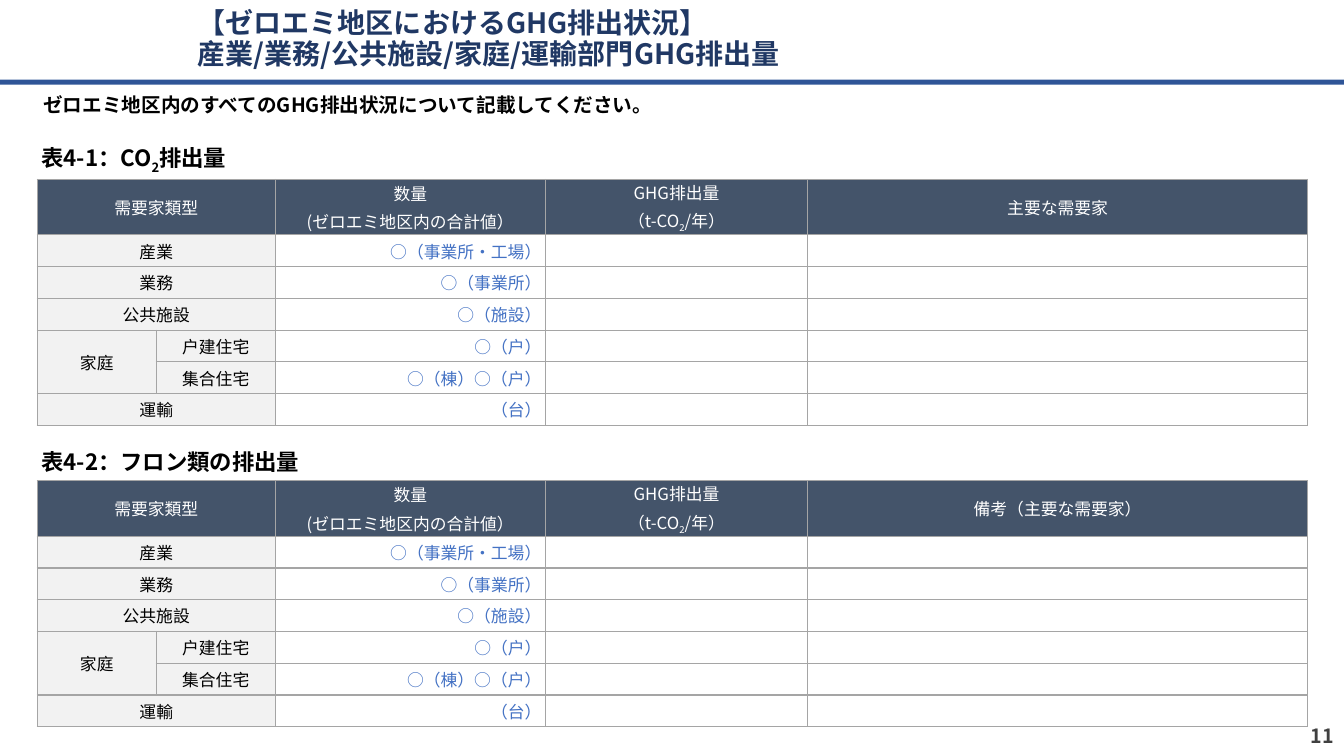
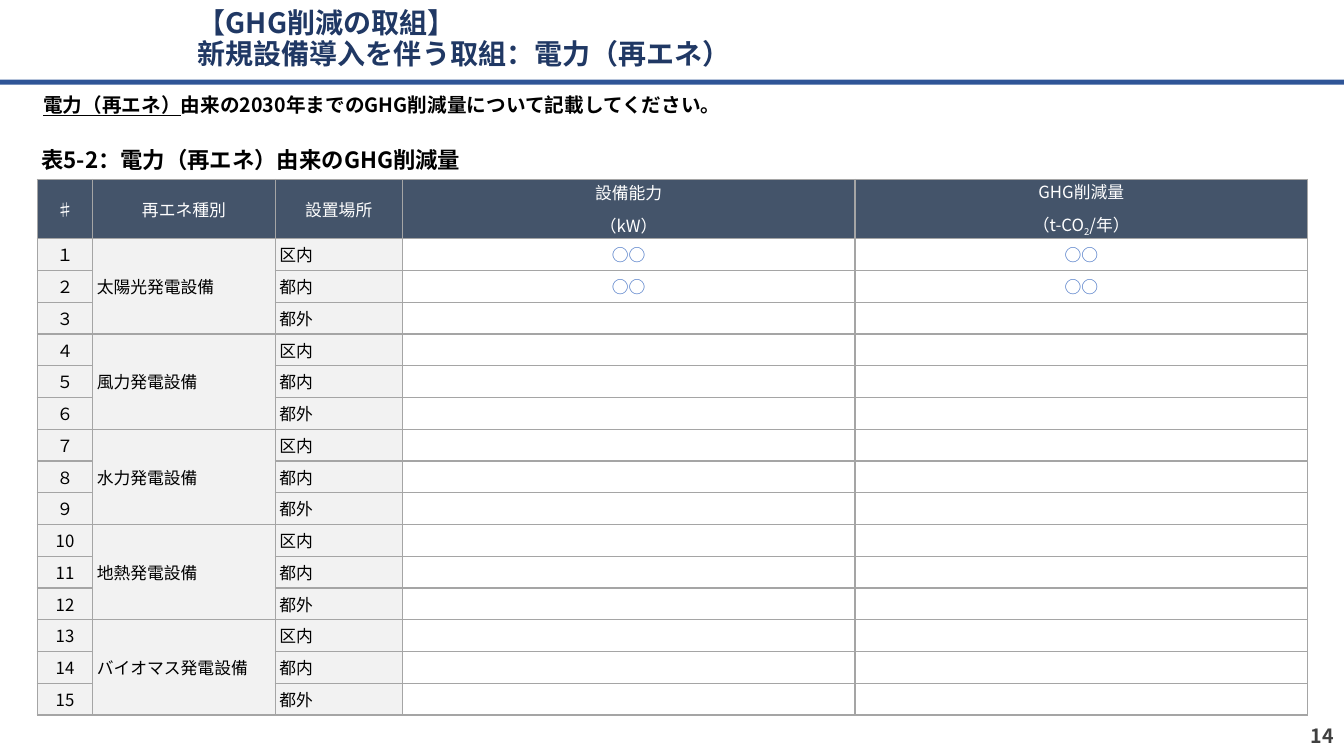
"""Build two GHG reporting slides with emission and reduction tables."""
from lxml.etree import SubElement
from pptx import Presentation
from pptx.dml.color import RGBColor
from pptx.enum.shapes import MSO_SHAPE
from pptx.enum.text import MSO_ANCHOR, MSO_AUTO_SIZE, PP_ALIGN
from pptx.oxml.ns import qn
from pptx.util import Inches, Pt

WIDTH, HEIGHT = 13.33, 7.5
LEFT, CONTENT_WIDTH = 0.37, 12.6
BAND_TOP, BAND_HEIGHT = 0.79, 0.05
LABEL_HEIGHT = 0.39
FONT = "Noto Sans CJK JP"
COLORS = {"band": "2F5597", "title": "203864", "header": "44546A", "label": "F2F2F2",
          "border": "A5A5A5", "entry": "4472C4", "number": "404040",
          "text": "000000", "white": "FFFFFF"}
STYLES = {
    "title": {"size": Pt(20), "bold": True, "color": "title"},
    "lead": {"size": Pt(14), "bold": True, "color": "text"},
    "caption": {"size": Pt(16), "bold": True, "color": "text"},
    "number": {"size": Pt(14), "bold": True, "color": "number"},
    "header": {"size": Pt(12), "bold": False, "color": "white"},
    "label": {"size": Pt(12), "bold": False, "color": "text"},
    "entry": {"size": Pt(12), "bold": False, "color": "entry"},
}
ALIGN = {"l": PP_ALIGN.LEFT, "c": PP_ALIGN.CENTER, "r": PP_ALIGN.RIGHT}
SUBSCRIPT_TWO = ("2", {"baseline": "-25000"})
PER_YEAR = ["（t-CO", SUBSCRIPT_TWO, "/年）"]

CONSUMERS = [
    ["産業", "", "○（事業所・工場）", "", ""],
    ["業務", "", "○（事業所）", "", ""],
    ["公共施設", "", "○（施設）", "", ""],
    ["家庭", "戸建住宅", "○（戸）", "", ""],
    ["", "集合住宅", "○（棟）○（戸）", "", ""],
    ["運輸", "", "（台）", "", ""],
]
SOURCES = ["太陽光発電設備", "風力発電設備", "水力発電設備", "地熱発電設備", "バイオマス発電設備"]
PLACES = ["区内", "都内", "都外"]
NUMBERS = ["１", "２", "３", "４", "５", "６", "７", "８", "９", "10", "11", "12", "13", "14", "15"]
FILLED_ROWS = 2


def consumer_table(caption, top, last_heading):
    return {
        "caption": caption, "top": top, "height": 2.44, "header_height": 0.55, "gap": 3,
        "columns": [1.18, 1.18, 2.68, 2.6, 4.96], "aligns": "ccrcc", "label_columns": 2,
        "header": [["需要家類型"], [], ["数量", "(ゼロエミ地区内の合計値）"],
                   ["GHG排出量", PER_YEAR], [last_heading]],
        "rows": CONSUMERS,
        "merges": [(row, 0, row, 1) for row in (0, 1, 2, 3, 6)] + [(4, 0, 5, 0)],
    }


def renewable_table(caption, top):
    rows = []
    for index, number in enumerate(NUMBERS):
        group, place = divmod(index, len(PLACES))
        entry = "○○" if index < FILLED_ROWS else ""
        rows.append([number, "" if place else SOURCES[group], PLACES[place], entry, entry])
    return {
        "caption": caption, "top": top, "height": 5.31, "header_height": 0.58, "gap": 6,
        "columns": [0.55, 1.81, 1.26, 4.49, 4.49], "aligns": "cllcc", "label_columns": 3,
        "header": [["♯"], ["再エネ種別"], ["設置場所"], ["設備能力", "（kW）"],
                   ["GHG削減量", PER_YEAR]],
        "rows": rows,
        "merges": [(row, 1, row + len(PLACES) - 1, 1)
                   for row in range(1, len(rows), len(PLACES))],
    }


PAGES = [
    {
        "number": "11",
        "title": ["【ゼロエミ地区におけるGHG排出状況】", "産業/業務/公共施設/家庭/運輸部門GHG排出量"],
        "lead": "ゼロエミ地区内のすべてのGHG排出状況について記載してください。",
        "tables": [
            consumer_table(["表4-1：CO", SUBSCRIPT_TWO, "排出量"], 1.78, "主要な需要家"),
            consumer_table("表4-2：フロン類の排出量", 4.77, "備考（主要な需要家）"),
        ],
    },
    {
        "number": "14",
        "title": ["【GHG削減の取組】", "新規設備導入を伴う取組：電力（再エネ）"],
        "lead": [("電力（再エネ）", {"u": "sng"}), "由来の2030年までのGHG削減量について記載してください。"],
        "tables": [renewable_table("表5-2：電力（再エネ）由来のGHG削減量", 1.78)],
    },
]


def color(name):
    return RGBColor.from_string(COLORS[name])


def write(frame, paragraphs, style, align="l", gap=0, line_spacing=None):
    formats = dict(STYLES[style])
    tint = formats.pop("color")
    for index, spans in enumerate(paragraphs):
        para = frame.add_paragraph() if index else frame.paragraphs[0]
        para.alignment = ALIGN[align]
        para.space_before = Pt(gap if index else 0)
        if line_spacing:
            para.line_spacing = line_spacing
        for part in [spans] if isinstance(spans, str) else spans:
            text, marks = (part, {}) if isinstance(part, str) else part
            span = para.add_run()
            span.text = text
            for name, value in formats.items():
                setattr(span.font, name, value)
            span.font.color.rgb = color(tint)
            span.font.name = FONT
            properties = span._r.get_or_add_rPr()
            SubElement(properties, qn("a:ea"), typeface=FONT)
            for name, value in marks.items():
                properties.set(name, value)


def set_frame(frame, side=0.04, edge=0):
    formats = {"word_wrap": True, "auto_size": MSO_AUTO_SIZE.NONE,
               "vertical_anchor": MSO_ANCHOR.MIDDLE,
               "margin_left": Inches(side), "margin_right": Inches(side),
               "margin_top": Inches(edge), "margin_bottom": Inches(edge)}
    for name, value in formats.items():
        setattr(frame, name, value)


def add_label(page, place, text, style, align="l", side=0.04):
    box = page.shapes.add_textbox(*map(Inches, place))
    set_frame(box.text_frame, side)
    write(box.text_frame, [text], style, align)


def add_borders(cell):
    properties = cell._tc.get_or_add_tcPr()
    for index, side in enumerate(("lnL", "lnR", "lnT", "lnB")):
        line = SubElement(properties, qn(f"a:{side}"), w=str(Pt(1)))
        fill = SubElement(line, qn("a:solidFill"))
        SubElement(fill, qn("a:srgbClr"), val=COLORS["border"])
        properties.insert(index, line)


def format_cell(cell, paragraphs, style, align, gap):
    formats = {"vertical_anchor": MSO_ANCHOR.MIDDLE, "margin_left": Inches(0.04),
               "margin_right": Inches(0.04), "margin_top": 0, "margin_bottom": 0}
    for name, value in formats.items():
        setattr(cell, name, value)
    if style == "entry":
        cell.fill.background()
    else:
        cell.fill.solid()
        cell.fill.fore_color.rgb = color(style)
    add_borders(cell)
    if any(paragraphs):
        write(cell.text_frame, paragraphs, style, align, gap)
    else:
        SubElement(cell.text_frame.paragraphs[0]._p, qn("a:endParaRPr"), sz="1200")


def add_data_table(page, data):
    add_label(page, (LEFT, data["top"] - LABEL_HEIGHT, CONTENT_WIDTH / 2, LABEL_HEIGHT),
              data["caption"], "caption")
    rows, columns = data["rows"], data["columns"]
    place = (LEFT, data["top"], CONTENT_WIDTH, data["height"])
    table = page.shapes.add_table(len(rows) + 1, len(columns), *map(Inches, place)).table
    table.horz_banding = False
    for column, width in zip(table.columns, columns):
        column.width = Inches(width)
    row_height = (data["height"] - data["header_height"]) / len(rows)
    for index, row in enumerate(table.rows):
        row.height = Inches(row_height if index else data["header_height"])
    for index, heading in enumerate(data["header"]):
        format_cell(table.cell(0, index), heading, "header", "c", data["gap"])
    for row, values in enumerate(rows, 1):
        for column, value in enumerate(values):
            style = "label" if column < data["label_columns"] else "entry"
            format_cell(table.cell(row, column), [value], style, data["aligns"][column], 0)
    for top, left, bottom, right in data["merges"]:
        table.cell(top, left).merge(table.cell(bottom, right))


def add_plain_shape(page, kind, place, fill=None):
    shape = page.shapes.add_shape(kind, *map(Inches, place))
    shape.shadow.inherit = False
    shape.line.fill.background()
    if fill:
        shape.fill.solid()
        shape.fill.fore_color.rgb = color(fill)
    else:
        shape.fill.background()
    return shape


def add_page(deck, layout, content):
    page = deck.slides.add_slide(layout)
    frame = page.shapes.title.text_frame
    set_frame(frame, 0.1, 0.05)
    write(frame, content["title"], "title", line_spacing=0.9)
    lead = add_plain_shape(page, MSO_SHAPE.ROUNDED_RECTANGLE,
                           (LEFT, BAND_TOP + BAND_HEIGHT, CONTENT_WIDTH, LABEL_HEIGHT))
    set_frame(lead.text_frame)
    write(lead.text_frame, [content["lead"]], "lead")
    for data in content["tables"]:
        add_data_table(page, data)
    add_label(page, (WIDTH - 3, HEIGHT - 0.4, 3, 0.4), content["number"], "number", "r", 0.1)
    return page


def main():
    deck = Presentation()
    deck.slide_width, deck.slide_height = Inches(WIDTH), Inches(HEIGHT)
    layout = deck.slide_layouts[5]
    title = layout.placeholders[0]
    title_place = {"left": 1.86, "top": 0, "width": 10.71, "height": BAND_TOP}
    for name, value in title_place.items():
        setattr(title, name, Inches(value))
    pages = [add_page(deck, layout, content) for content in PAGES]
    band = add_plain_shape(pages[0], MSO_SHAPE.RECTANGLE,
                           (0, BAND_TOP, WIDTH, BAND_HEIGHT), "band")
    layout.shapes.element.append(band.element)
    deck.save("out.pptx")


if __name__ == "__main__":
    main()
